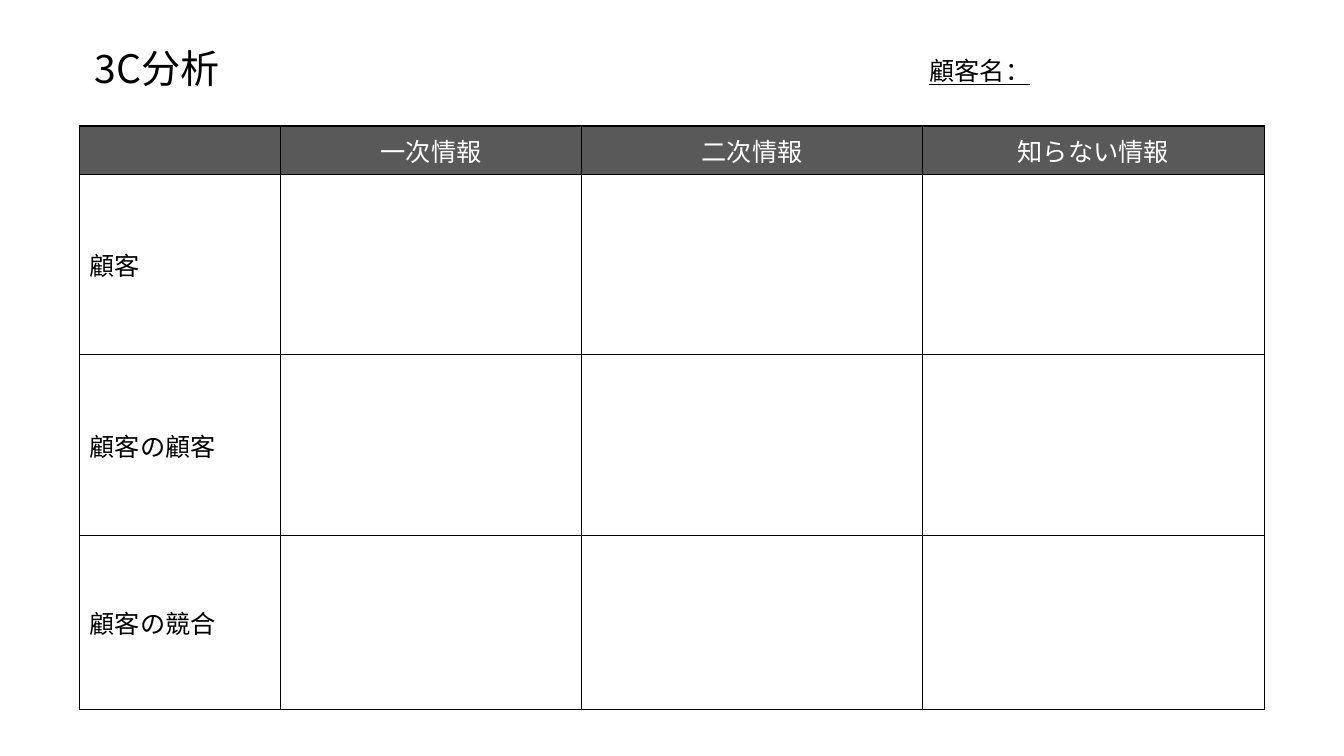
"""Build the 3C analysis worksheet slide."""
from dataclasses import dataclass

from lxml.etree import SubElement
from pptx import Presentation
from pptx.dml.color import RGBColor
from pptx.enum.text import MSO_ANCHOR, PP_ALIGN
from pptx.oxml.ns import qn
from pptx.slide import Slide
from pptx.table import _Cell
from pptx.text.text import _Paragraph
from pptx.util import Inches, Pt

FONT = "Noto Sans CJK JP"
BLACK = RGBColor(0x00, 0x00, 0x00)
WHITE = RGBColor(0xFF, 0xFF, 0xFF)
GRAY = RGBColor(0x59, 0x59, 0x59)

SLIDE_W, SLIDE_H = 13.33, 7.5
TABLE_X, TABLE_Y = 0.79 / SLIDE_W, 1.25 / SLIDE_H
COLS = [share / SLIDE_W for share in (1.99, 2.99, 3.38, 3.39)]
ROWS = [share / SLIDE_H for share in (0.48, 1.79, 1.79, 1.73)]
HEADERS = ["", "一次情報", "二次情報", "知らない情報"]
SUBJECTS = ["顧客", "顧客の顧客", "顧客の競合"]
BLANK_END = 2.75


@dataclass(frozen=True)
class Label:
    """Text box placed by shares of the slide."""
    text: str
    x: float
    y: float
    w: float
    h: float
    size: int
    anchor: MSO_ANCHOR
    spacing: float = 1.0
    underline: bool = False
    tab: float = 0


LABELS = [
    Label("3C分析", 0.84 / SLIDE_W, 0.41 / SLIDE_H, 11.5 / SLIDE_W, 0.58 / SLIDE_H,
          28, MSO_ANCHOR.MIDDLE, spacing=0.9),
    Label("顧客名：\t", 9.12 / SLIDE_W, 0.5 / SLIDE_H, 2.98 / SLIDE_W, 0.4 / SLIDE_H,
          18, MSO_ANCHOR.TOP, underline=True, tab=BLANK_END),
]


def across(share: float) -> int:
    """Convert a share of the slide width to a length."""
    return Inches(share * SLIDE_W)


def down(share: float) -> int:
    """Convert a share of the slide height to a length."""
    return Inches(share * SLIDE_H)


def format_runs(p: _Paragraph, size: int, color: RGBColor, underline: bool = False) -> None:
    """Give every run its font, size and colour."""
    for r in p.runs:
        r.font.name = FONT
        r.font.size = Pt(size)
        r.font.color.rgb = color
        if underline:
            r.font.underline = True
        SubElement(r.font._element, qn("a:ea"), typeface=FONT)


def add_label(s: Slide, label: Label) -> None:
    """Draw one text box."""
    sp = s.shapes.add_textbox(across(label.x), down(label.y), across(label.w), down(label.h))
    tf = sp.text_frame
    tf.word_wrap = True
    tf.vertical_anchor = label.anchor
    p = tf.paragraphs[0]
    p.text = label.text
    p.line_spacing = label.spacing
    if label.tab:
        tabs = SubElement(p._p.get_or_add_pPr(), qn("a:tabLst"))
        SubElement(tabs, qn("a:tab"), pos=str(Inches(label.tab)), algn="l")
    format_runs(p, label.size, BLACK, label.underline)


def add_borders(cell: _Cell) -> None:
    """Outline a cell in black, ahead of its fill."""
    props = cell._tc.get_or_add_tcPr()
    for index, side in enumerate(("lnL", "lnR", "lnT", "lnB")):
        ln = SubElement(props, qn(f"a:{side}"), w=str(Pt(1)))
        fill = SubElement(ln, qn("a:solidFill"))
        SubElement(fill, qn("a:srgbClr"), val=str(BLACK))
        props.insert(index, ln)


def add_grid(s: Slide) -> None:
    """Draw the worksheet table."""
    frame = s.shapes.add_table(len(ROWS), len(COLS), across(TABLE_X), down(TABLE_Y),
                               across(sum(COLS)), down(sum(ROWS)))
    table = frame.table
    table.first_row = table.horz_banding = False
    for column, share in zip(table.columns, COLS):
        column.width = across(share)
    for row, share in zip(table.rows, ROWS):
        row.height = down(share)
    texts = [HEADERS] + [[subject, "", "", ""] for subject in SUBJECTS]
    for i, row_texts in enumerate(texts):
        for j, text in enumerate(row_texts):
            cell = table.cell(i, j)
            cell.vertical_anchor = MSO_ANCHOR.MIDDLE
            if i == 0:
                cell.fill.solid()
                cell.fill.fore_color.rgb = GRAY
            else:
                cell.fill.background()
            add_borders(cell)
            if text:
                p = cell.text_frame.paragraphs[0]
                p.text = text
                p.alignment = PP_ALIGN.CENTER if i == 0 else PP_ALIGN.LEFT
                format_runs(p, 18, WHITE if i == 0 else BLACK)


def main() -> None:
    """Build and save the slide."""
    prs = Presentation()
    prs.slide_width, prs.slide_height = Inches(SLIDE_W), Inches(SLIDE_H)
    s = prs.slides.add_slide(prs.slide_layouts[6])
    add_grid(s)
    for label in LABELS:
        add_label(s, label)
    prs.save("out.pptx")


if __name__ == "__main__":
    main()
